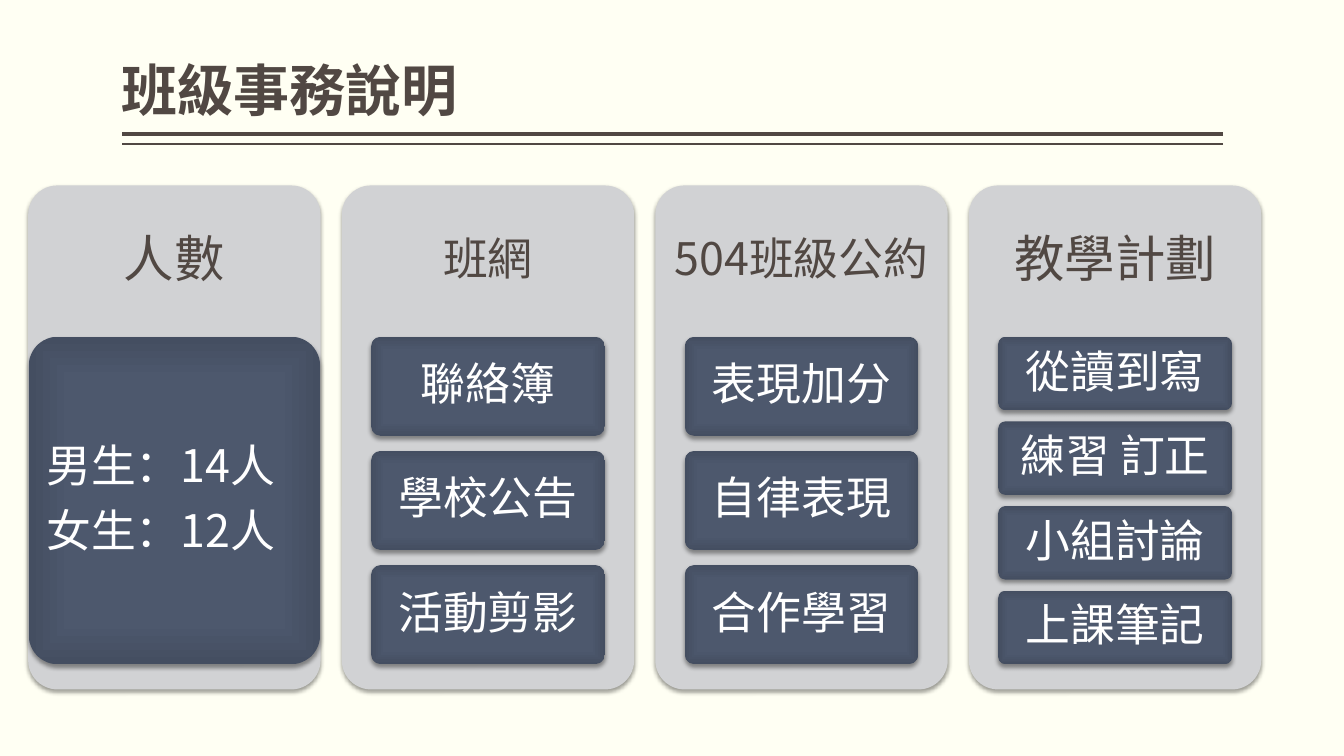
import dataclasses

import pptx
import pptx.dml.color
import pptx.enum.shapes
import pptx.enum.text
import pptx.oxml
import pptx.oxml.ns
import pptx.util

Inches = pptx.util.Inches
Pt = pptx.util.Pt
ALIGN = pptx.enum.text.PP_ALIGN
ANCHOR = pptx.enum.text.MSO_ANCHOR
NS = pptx.oxml.ns.nsdecls("a")
qn = pptx.oxml.ns.qn


@dataclasses.dataclass(frozen=True)
class Theme:
    font: str = "Noto Sans CJK TC"
    background: str = "FFFFF3"
    ink: str = "514843"
    panel: str = "D1D2D4"
    card_text: str = "FFFFFF"
    card_stops: tuple = ((0, "4E596E"), (71, "4D586D"), (100, "444E61"))
    title_size: int = 40
    large_size: int = 36
    body_size: int = 32


def rgb(value):
    return pptx.dml.color.RGBColor.from_string(value)


def apply(target, values):
    for name, value in values.items():
        setattr(target, name, value)


class Deck:
    def __init__(self, theme):
        self.theme = theme
        self.presentation = pptx.Presentation()
        apply(self.presentation, {"slide_width": Inches(13.33), "slide_height": Inches(7.5)})
        self.slide = self.presentation.slides.add_slide(self.presentation.slide_layouts[5])
        fill = self.slide.background.fill
        fill.solid()
        fill.fore_color.rgb = rgb(theme.background)

    def set_text(self, shape, lines, size, color, insets, align=ALIGN.CENTER,
                 anchor=ANCHOR.MIDDLE, bold=False, spaced=True):
        frame = shape.text_frame
        horizontal, vertical = map(Inches, insets)
        apply(frame, {
            "word_wrap": True, "auto_size": pptx.enum.text.MSO_AUTO_SIZE.NONE,
            "vertical_anchor": anchor,
            "margin_left": horizontal, "margin_right": horizontal,
            "margin_top": vertical, "margin_bottom": vertical,
        })
        frame.text = "\n".join(lines)
        for paragraph in frame.paragraphs:
            apply(paragraph, {"alignment": align, "line_spacing": 0.9,
                              "space_before": Pt(0), "space_after": Pt(0)})
            if spaced:
                after = paragraph._p.pPr.find(qn("a:spcAft"))
                after.clear()
                after.append(pptx.oxml.parse_xml(f'<a:spcPct {NS} val="35000"/>'))
            font = paragraph.runs[0].font
            apply(font, {"name": self.theme.font, "size": Pt(size), "bold": bold})
            font.color.rgb = rgb(color)
            font._element.find(qn("a:latin")).addnext(
                pptx.oxml.parse_xml(f'<a:ea {NS} typeface="{self.theme.font}"/>'))

    def title(self, text):
        heading = self.slide.shapes.title
        apply(heading, {"left": Inches(1.21), "top": Inches(0.08),
                        "width": Inches(10.92), "height": Inches(1.2)})
        self.set_text(heading, [text], self.theme.title_size, self.theme.ink, (0, 0.05),
                      ALIGN.LEFT, ANCHOR.BOTTOM, bold=True, spaced=False)

    def rule(self, top, weight):
        rule = self.slide.shapes.add_connector(
            pptx.enum.shapes.MSO_CONNECTOR.STRAIGHT,
            Inches(12.13), Inches(top), Inches(1.21), Inches(top))
        rule.line.color.rgb = rgb(self.theme.ink)
        rule.line.width = Pt(weight)
        rule._element.spPr.append(pptx.oxml.parse_xml(f"<a:effectLst {NS}/>"))

    def rounded(self, left, top, width, height):
        shape = self.slide.shapes.add_shape(
            pptx.enum.shapes.MSO_SHAPE.ROUNDED_RECTANGLE,
            Inches(left), Inches(top), Inches(width), Inches(height))
        shape.adjustments[0] = 0.1
        shape.fill.solid()
        shape.fill.fore_color.rgb = rgb(self.theme.panel)
        shape.line.fill.background()
        shape.shadow.inherit = False
        shape._element.spPr.find(qn("a:effectLst")).append(pptx.oxml.parse_xml(
            f'<a:outerShdw {NS} blurRad="{Pt(3.1)}" dist="{Pt(2)}" dir="5400000" '
            'rotWithShape="0"><a:srgbClr val="000000"><a:alpha val="38000"/>'
            "</a:srgbClr></a:outerShdw>"))
        return shape

    def panel(self, left, top, width, height, heading, size, heading_height):
        self.rounded(left, top, width, height)
        label = self.slide.shapes.add_textbox(
            Inches(left), Inches(top), Inches(width), Inches(heading_height))
        inset = 0.15 if size == self.theme.large_size else 0.13
        self.set_text(label, [heading], size, self.theme.ink, (inset, inset))

    def card(self, left, top, width, height, lines, align):
        card = self.rounded(left, top, width, height)
        stops = "".join(
            f'<a:gs pos="{position * 1000}"><a:srgbClr val="{color}"/></a:gs>'
            for position, color in self.theme.card_stops)
        properties = card._element.spPr
        properties.replace(properties.find(qn("a:solidFill")), pptx.oxml.parse_xml(
            f'<a:gradFill {NS} rotWithShape="1"><a:gsLst>{stops}</a:gsLst>'
            '<a:path path="rect"><a:fillToRect l="50000" t="50000" r="50000" b="50000"/>'
            "</a:path></a:gradFill>"))
        self.set_text(card, lines, self.theme.body_size, self.theme.card_text,
                      (0.09, 0.07), align)


def main():
    theme = Theme()
    deck = Deck(theme)
    deck.title("班級事務說明")
    for top, weight in ((1.33, 3), (1.43, 1)):
        deck.rule(top, weight)

    topics = [
        ("人數", theme.large_size, 2.89, ALIGN.LEFT, [["男生：14人", "女生：12人"]]),
        ("班網", theme.body_size, 2.32, ALIGN.CENTER,
         [["聯絡簿"], ["學校公告"], ["活動剪影"]]),
        ("504班級公約", theme.body_size, 2.32, ALIGN.CENTER,
         [["表現加分"], ["自律表現"], ["合作學習"]]),
        ("教學計劃", theme.large_size, 2.32, ALIGN.CENTER,
         [["從讀到寫"], ["練習 訂正"], ["小組討論"], ["上課筆記"]]),
    ]
    panel_top, panel_width, panel_height, heading_height = 1.84, 2.9, 5, 1.5
    cards_height, gap_ratio = 3.25, 0.15
    for column, (heading, size, card_width, align, cards) in enumerate(topics):
        left = 0.28 + 3.11 * column
        deck.panel(left, panel_top, panel_width, panel_height, heading, size, heading_height)
        card_height = cards_height / (len(cards) + gap_ratio * (len(cards) - 1))
        for row, lines in enumerate(cards):
            deck.card(left + (panel_width - card_width) / 2,
                      panel_top + heading_height + row * card_height * (1 + gap_ratio),
                      card_width, card_height, lines, align)
    deck.presentation.save("out.pptx")


if __name__ == "__main__":
    main()
